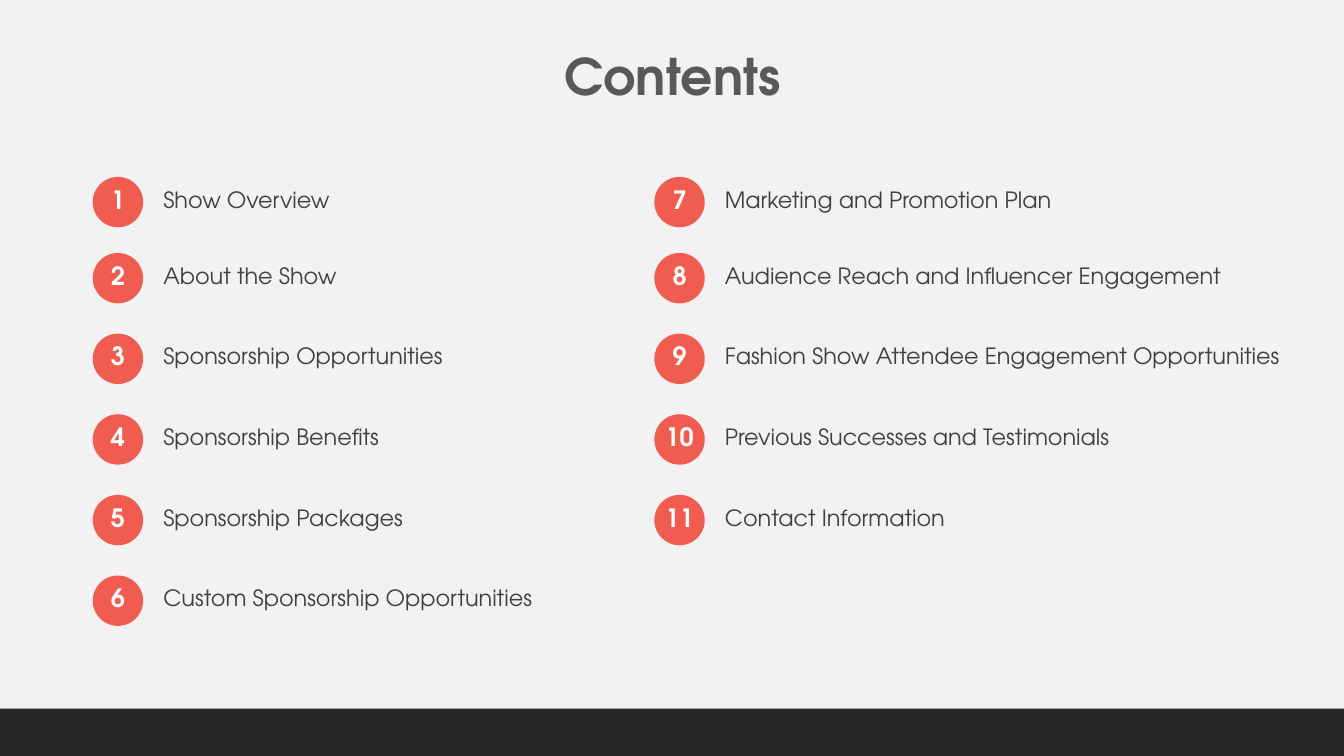
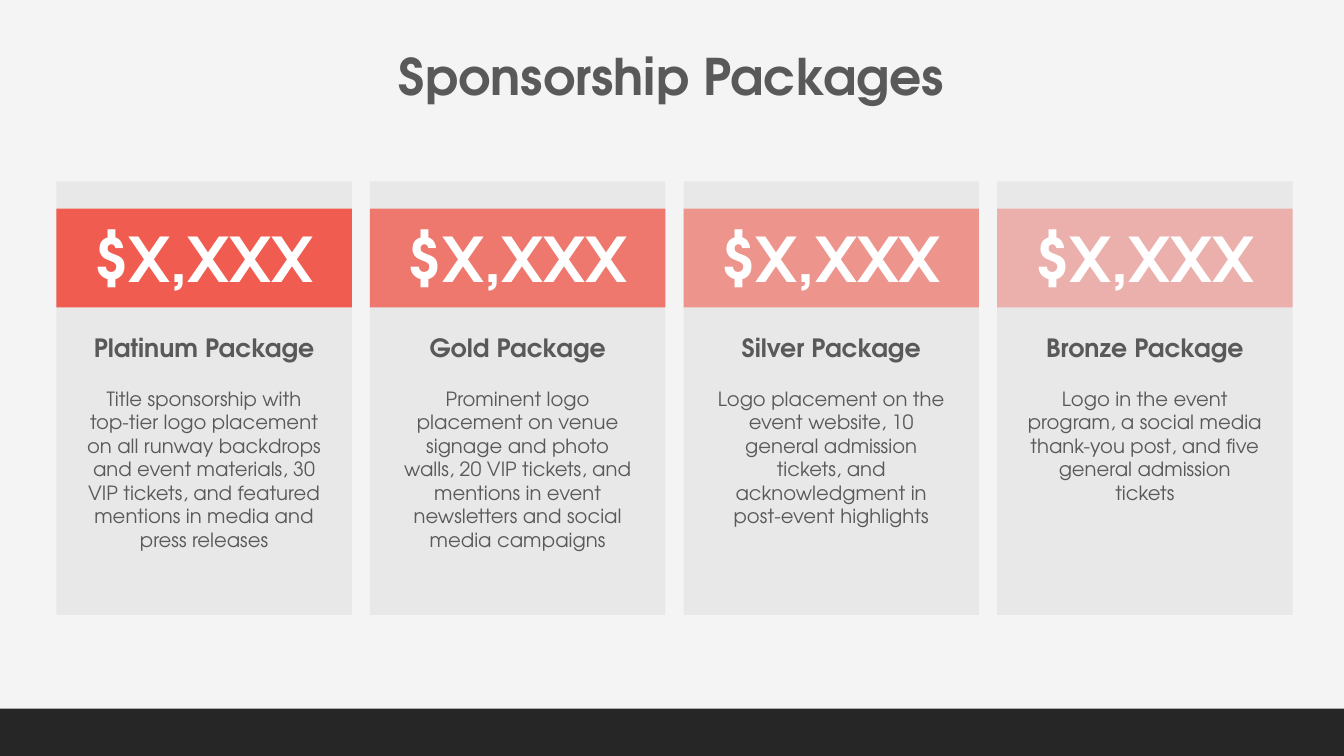
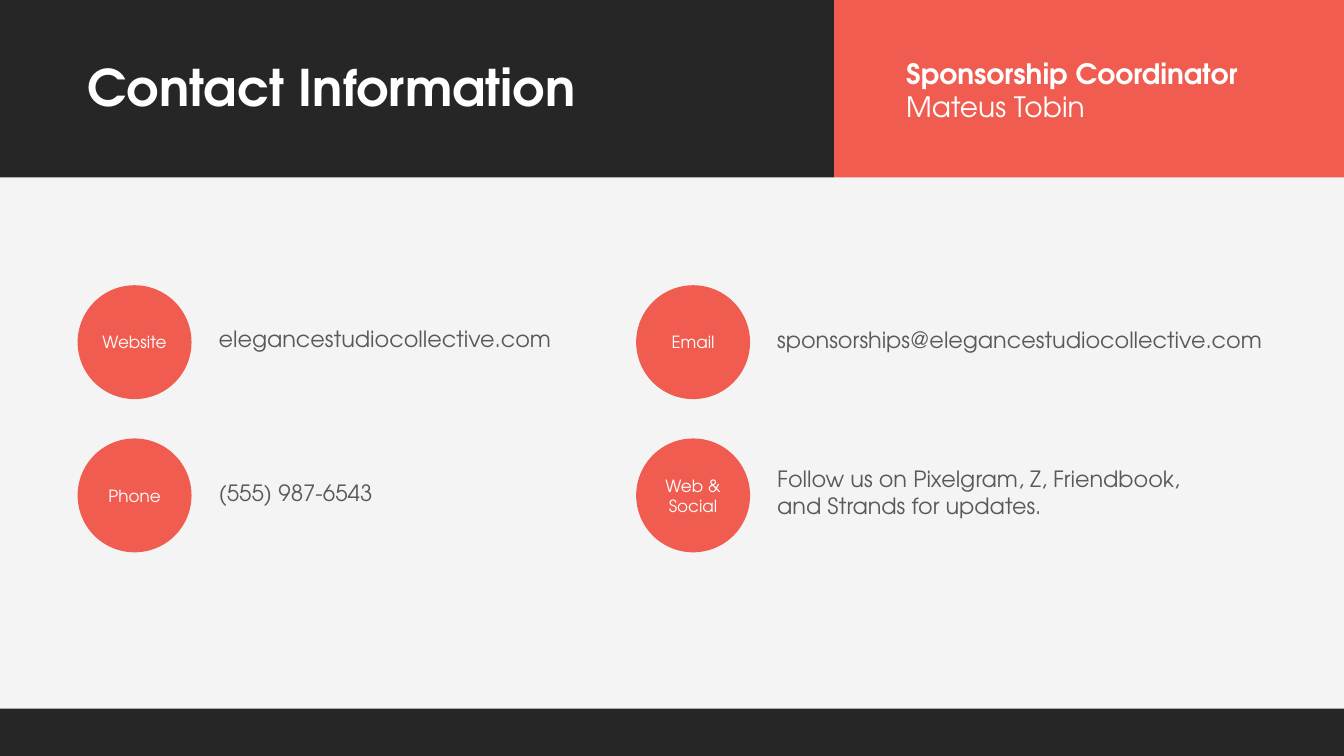
"""Builds three sponsorship slides: contents, packages and contact information."""
import pptx
import pptx.dml.color
import pptx.enum.shapes
import pptx.enum.text
import pptx.oxml
import pptx.oxml.ns
import pptx.util

Inches = pptx.util.Inches
SHAPE = pptx.enum.shapes.MSO_SHAPE
ALIGN = pptx.enum.text.PP_ALIGN
ANCHOR = pptx.enum.text.MSO_ANCHOR

FONT = "TeX Gyre Adventor"
CORAL, DARK, GREY, INK, WHITE = "F05D50", "262626", "595959", "404040", "FFFFFF"
CARD, PALE, PALER = "E7E6E6", "F2F2F2", "F4F4F4"
NO_STYLE = "{2D5ABB26-0587-4C30-8999-92F81FD0307C}"

CONTENTS = [
    "Show Overview", "About the Show", "Sponsorship Opportunities",
    "Sponsorship Benefits", "Sponsorship Packages",
    "Custom Sponsorship Opportunities", "Marketing and Promotion Plan",
    "Audience Reach and Influencer Engagement",
    "Fashion Show Attendee Engagement Opportunities",
    "Previous Successes and Testimonials", "Contact Information",
]
PACKAGES = [
    ("Platinum Package", "Title sponsorship with top-tier logo placement on all runway "
     "backdrops and event materials, 30 VIP tickets, and featured mentions in media "
     "and press releases"),
    ("Gold Package", "Prominent logo placement on venue signage and photo walls, 20 VIP "
     "tickets, and mentions in event newsletters and social media campaigns"),
    ("Silver Package", "Logo placement on the event website, 10 general admission "
     "tickets, and acknowledgment in post-event highlights"),
    ("Bronze Package", "Logo in the event program, a social media thank-you post, and "
     "five general admission tickets"),
]
CONTACTS = [
    ("Website", "elegancestudiocollective.com", 0.77, 2.83, 3.18, 3.53),
    ("Email", "sponsorships@elegancestudiocollective.com", 6.31, 2.83, 3.19, 5.16),
    ("Phone", "(555) 987-6543", 0.77, 4.35, 4.7, 2.71),
    ("Web & Social", "Follow us on Pixelgram, Z, Friendbook, and Strands for updates.",
     6.31, 4.35, 4.57, 4.35),
]


def rgb(color):
    return pptx.dml.color.RGBColor.from_string(color)


def write(tf, lines, color, align=ALIGN.LEFT):
    """Fill a text frame with (text, size, bold) paragraphs."""
    tf.text = "\n".join(text for text, _, _ in lines)
    for p, (_, size, bold) in zip(tf.paragraphs, lines):
        p.alignment = align
        for r in p.runs:
            r.font.name = FONT
            r.font.size = pptx.util.Pt(size)
            r.font.bold = bold
            r.font.color.rgb = rgb(color)


def add_text(s, x, y, w, h, lines, color=GREY, align=ALIGN.LEFT):
    tf = s.shapes.add_textbox(Inches(x), Inches(y), Inches(w), Inches(h)).text_frame
    tf.word_wrap = True
    tf.auto_size = pptx.enum.text.MSO_AUTO_SIZE.SHAPE_TO_FIT_TEXT
    write(tf, lines, color, align)


def add_shape(s, kind, x, y, w, h, color, opacity=100):
    sp = s.shapes.add_shape(kind, Inches(x), Inches(y), Inches(w), Inches(h))
    sp.shadow.inherit = False
    sp.line.fill.background()
    sp.fill.solid()
    sp.fill.fore_color.rgb = rgb(color)
    if opacity < 100:
        clr = sp._element.spPr.find(".//" + pptx.oxml.ns.qn("a:srgbClr"))
        alpha = pptx.oxml.parse_xml(
            f'<a:alpha {pptx.oxml.ns.nsdecls("a")} val="{opacity * 1000}"/>')
        clr.append(alpha)
    return sp


def add_slide(prs, background):
    """Add a blank slide with the shared background and footer band."""
    s = prs.slides.add_slide(prs.slide_layouts[6])
    s.background.fill.solid()
    s.background.fill.fore_color.rgb = rgb(background)
    add_shape(s, SHAPE.RECTANGLE, 0, 7.03, 13.33, 0.47, DARK)
    return s


def add_title(s, text, x, y, w, color=GREY, align=ALIGN.CENTER):
    add_text(s, x, y, w, 0.71, [(text, 36, True)], color, align)


def add_contents_column(s, x, text_width, first, items):
    """Add numbered circles under a two-column table of entries."""
    top, first_height, height, circle = 1.65, 0.71, 0.8, 0.5
    heights = [first_height] + [height] * (len(items) - 1)
    for i, row_height in enumerate(heights):
        middle = top + sum(heights[:i]) + row_height / 2
        add_shape(s, SHAPE.OVAL, x, middle - circle / 2, circle, circle, CORAL)
    frame = s.shapes.add_table(len(items), 2, Inches(x), Inches(top),
                               Inches(circle + text_width), Inches(sum(heights)))
    table = frame.table
    table.first_row = table.horz_banding = False
    table._tbl.tblPr.find(pptx.oxml.ns.qn("a:tableStyleId")).text = NO_STYLE
    table.columns[0].width, table.columns[1].width = Inches(circle), Inches(text_width)
    for i, item in enumerate(items):
        table.rows[i].height = Inches(heights[i])
        number, entry = table.cell(i, 0), table.cell(i, 1)
        for cell in (number, entry):
            cell.fill.background()
            cell.vertical_anchor = ANCHOR.MIDDLE
        entry.margin_left = Inches(0.2)
        write(number.text_frame, [(str(first + i), 18, True)], WHITE, ALIGN.CENTER)
        write(entry.text_frame, [(item, 16, False)], INK)


def add_package(s, x, name, details, opacity):
    """Add a card with a price band across its top."""
    width = 2.93
    tf = add_shape(s, SHAPE.RECTANGLE, x, 1.8, width, 4.3, CARD, 80).text_frame
    tf.vertical_anchor = ANCHOR.TOP
    tf.margin_left = tf.margin_right = tf.margin_bottom = Inches(0.3)
    tf.margin_top = Inches(1.5)
    write(tf, [(name, 18, True), (details, 14, False)], GREY, ALIGN.CENTER)
    tf.paragraphs[1].space_before = pptx.util.Pt(17)
    band = add_shape(s, SHAPE.RECTANGLE, x, 2.07, width, 0.98, CORAL, opacity)
    write(band.text_frame, [("$X,XXX", 44, True)], WHITE, ALIGN.CENTER)


def add_contact(s, label, value, x, y, text_y, text_width):
    """Add a labelled circle with its value to the right."""
    tf = add_shape(s, SHAPE.OVAL, x, y, 1.13, 1.13, CORAL).text_frame
    tf.margin_left = tf.margin_right = Inches(0)
    write(tf, [(label, 12, False)], WHITE, ALIGN.CENTER)
    add_text(s, x + 1.3, text_y, text_width, 0.37, [(value, 16, False)])


def contents_slide(prs):
    s = add_slide(prs, PALE)
    add_title(s, "Contents", 2.02, 0.4, 9.3)
    add_contents_column(s, 0.92, 4.94, 1, CONTENTS[:6])
    add_contents_column(s, 6.49, 5.9, 7, CONTENTS[6:])


def packages_slide(prs):
    s = add_slide(prs, PALER)
    add_title(s, "Sponsorship Packages", 2.82, 0.4, 7.68)
    for i, (name, details) in enumerate(PACKAGES):
        add_package(s, 0.56 + 3.11 * i, name, details, 100 - 20 * i)


def contact_slide(prs):
    s = add_slide(prs, PALER)
    add_shape(s, SHAPE.RECTANGLE, 8.27, 0, 5.06, 1.76, CORAL)
    add_shape(s, SHAPE.RECTANGLE, 0, 0, 8.27, 1.76, DARK)
    add_title(s, "Contact Information", 0.77, 0.51, 5.66, WHITE, ALIGN.LEFT)
    add_text(s, 8.89, 0.51, 3.94, 0.77,
             [("Sponsorship Coordinator", 20, True), ("Mateus Tobin", 20, False)], WHITE)
    for contact in CONTACTS:
        add_contact(s, *contact)


def main():
    prs = pptx.Presentation()
    prs.slide_width, prs.slide_height = Inches(13.33), Inches(7.5)
    contents_slide(prs)
    packages_slide(prs)
    contact_slide(prs)
    prs.save("out.pptx")


if __name__ == "__main__":
    main()
